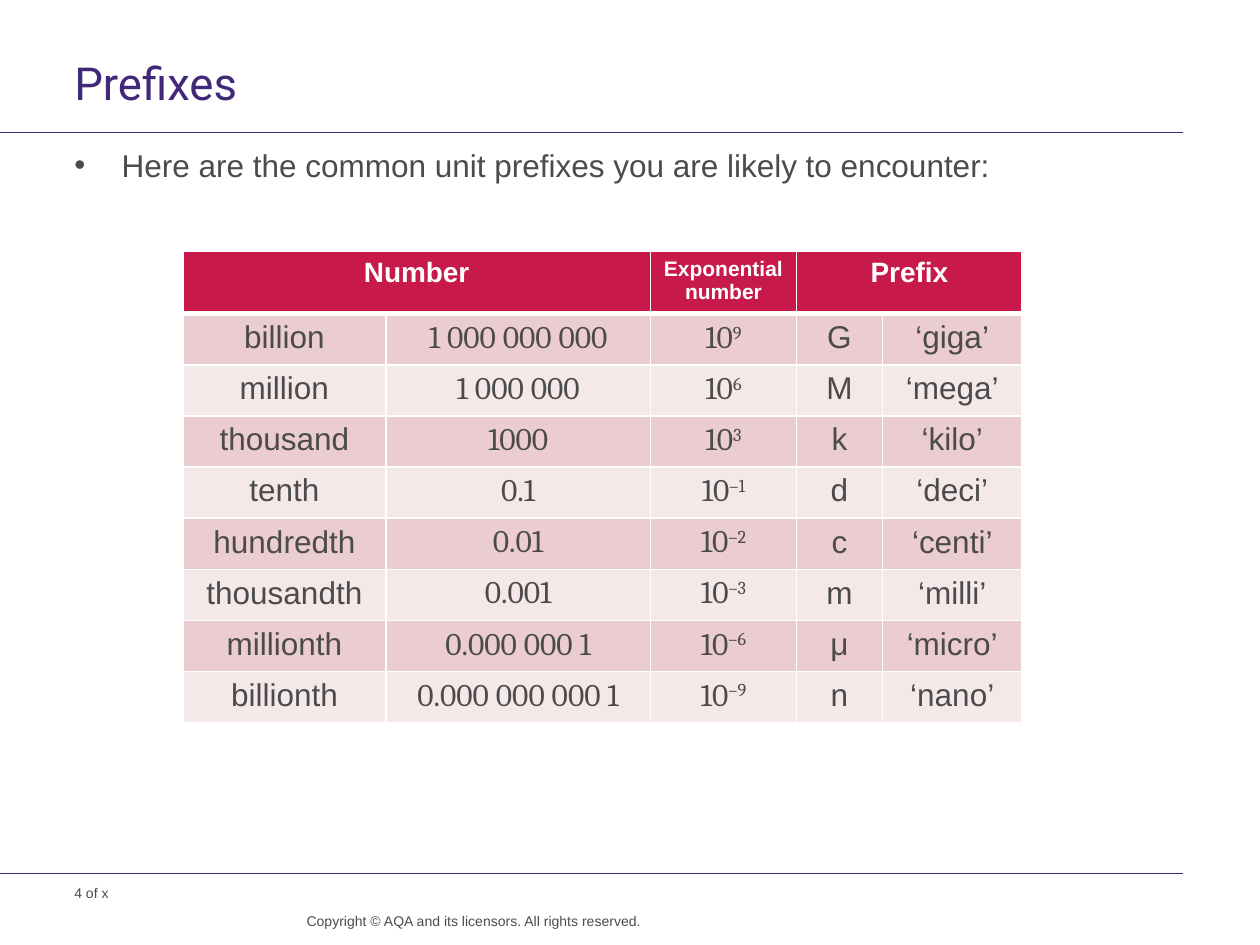
import pptx
import pptx.util
import pptx.dml.color
import pptx.enum.shapes
import pptx.enum.text
import lxml.etree
import pptx.oxml.ns

Pt = pptx.util.Pt
qn = pptx.oxml.ns.qn
Align = pptx.enum.text.PP_ALIGN

PURPLE, GREY, WHITE, RED = "412878", "4B4B4B", "FFFFFF", "C8194B"
BANDS = ["EBCCD0", "F5E8E9"]

TITLE = "Prefixes"
INTRO = "Here are the common unit prefixes you are likely to encounter:"
PAGE = "4 of x"
COPYRIGHT = "Copyright © AQA and its licensors. All rights reserved."

# first column, columns spanned, text, size
HEADERS = [(0, 2, "Number", 16), (2, 1, "Exponential number", 12), (3, 2, "Prefix", 16)]
# name, number, power of ten, symbol, prefix
PREFIXES = [
    ("billion", "1 000 000 000", "9", "G", "‘giga’"),
    ("million", "1 000 000", "6", "M", "‘mega’"),
    ("thousand", "1000", "3", "k", "‘kilo’"),
    ("tenth", "0.1", "–1", "d", "‘deci’"),
    ("hundredth", "0.01", "–2", "c", "‘centi’"),
    ("thousandth", "0.001", "–3", "m", "‘milli’"),
    ("millionth", "0.000 000 1", "–6", "μ", "‘micro’"),
    ("billionth", "0.000 000 000 1", "–9", "n", "‘nano’"),
]
COLUMN_FONTS = ["Arial", "Cambria", "Cambria", "Arial", "Arial"]
POWER_COLUMN = 2
COLUMN_WIDTHS = [116, 151.2, 83.5, 49, 80]
HEADER_HEIGHT, ROW_HEIGHT = 34, 29.2
TABLE_LEFT, TABLE_TOP = 104.5, 143.3
MARGIN, RULE_END = 42.5, 676


def rgb(value):
    return pptx.dml.color.RGBColor.from_string(value)


def style(paragraph, size, color=GREY, name="Arial", bold=False):
    font = paragraph.font
    font.size, font.name, font.bold = Pt(size), name, bold
    font.color.rgb = rgb(color)


def add_rule(slide, y):
    line = slide.shapes.add_connector(
        pptx.enum.shapes.MSO_CONNECTOR.STRAIGHT, 0, Pt(y), Pt(RULE_END), Pt(y))
    line.line.color.rgb = rgb(PURPLE)
    line.line.width = Pt(0.6)
    lxml.etree.SubElement(line._element.spPr, qn("a:effectLst"))


def add_text(slide, text, box, right_inset=0, spacing=None):
    shape = slide.shapes.add_textbox(*map(Pt, box))
    frame = shape.text_frame
    frame.word_wrap = True
    frame.margin_left = frame.margin_top = frame.margin_bottom = 0
    frame.margin_right = Pt(right_inset)
    paragraph = frame.paragraphs[0]
    paragraph.text = text
    if spacing:
        paragraph.line_spacing = Pt(spacing)
    return paragraph


def add_bullet(paragraph, indent):
    properties = paragraph._p.get_or_add_pPr()
    properties.set("marL", str(Pt(indent)))
    properties.set("indent", str(Pt(-indent)))
    lxml.etree.SubElement(properties, qn("a:buFont")).set("typeface", "Arial")
    lxml.etree.SubElement(properties, qn("a:buChar")).set("char", "•")


def paint_cell(cell, fill, bottom=1):
    """Give the cell white borders, then its fill, in schema order."""
    properties = cell._tc.get_or_add_tcPr()
    for side, width in (("L", 1), ("R", 1), ("T", 1), ("B", bottom)):
        line = lxml.etree.SubElement(properties, qn("a:ln" + side), w=str(Pt(width)))
        solid = lxml.etree.SubElement(line, qn("a:solidFill"))
        lxml.etree.SubElement(solid, qn("a:srgbClr"), val=WHITE)
    cell.fill.solid()
    cell.fill.fore_color.rgb = rgb(fill)


def fill_cell(cell, text, size, color, name="Arial", bold=False):
    paragraph = cell.text_frame.paragraphs[0]
    paragraph.text = text
    paragraph.alignment = Align.CENTER
    style(paragraph, size, color, name, bold)
    return paragraph


def add_prefix_table(slide):
    height = HEADER_HEIGHT + ROW_HEIGHT * len(PREFIXES)
    table = slide.shapes.add_table(
        len(PREFIXES) + 1, len(COLUMN_WIDTHS), Pt(TABLE_LEFT), Pt(TABLE_TOP),
        Pt(sum(COLUMN_WIDTHS)), Pt(height)).table
    for column, width in zip(table.columns, COLUMN_WIDTHS):
        column.width = Pt(width)
    for index, row in enumerate(table.rows):
        row.height = Pt(ROW_HEIGHT if index else HEADER_HEIGHT)

    for cell in table.rows[0].cells:
        paint_cell(cell, RED, bottom=3)
    for first, span, text, size in HEADERS:
        cell = table.cell(0, first)
        if span > 1:
            cell.merge(table.cell(0, first + span - 1))
        fill_cell(cell, text, size, WHITE, bold=True)

    for row, values in enumerate(PREFIXES, start=1):
        for column, (value, name) in enumerate(zip(values, COLUMN_FONTS)):
            cell = table.cell(row, column)
            paint_cell(cell, BANDS[(row - 1) % 2])
            is_power = column == POWER_COLUMN
            paragraph = fill_cell(cell, "10" if is_power else value, 18, GREY, name)
            if is_power:
                exponent = paragraph.add_run()
                exponent.text = value
                exponent.font._element.set("baseline", "30000")


def main():
    presentation = pptx.Presentation()
    presentation.slide_width, presentation.slide_height = Pt(720), Pt(540)
    slide = presentation.slides.add_slide(presentation.slide_layouts[6])

    for y in (75.6, 499):
        add_rule(slide, y)
    style(add_text(slide, PAGE, (MARGIN, 505.4, 113, 9.4)), 8)
    title = add_text(slide, TITLE, (MARGIN, 34.6, 633.6, 33.8), 7.2, 28)
    style(title, 26, PURPLE, "Roboto")
    intro = add_text(slide, INTRO, (MARGIN, 85, 633.6, 347), 7.2, 20)
    add_bullet(intro, 27)
    style(intro, 18)
    notice = add_text(slide, COPYRIGHT, (155.5, 521.3, 211, 18.7), spacing=10)
    notice.alignment = Align.RIGHT
    style(notice, 8)
    add_prefix_table(slide)

    presentation.save("out.pptx")


if __name__ == "__main__":
    main()
